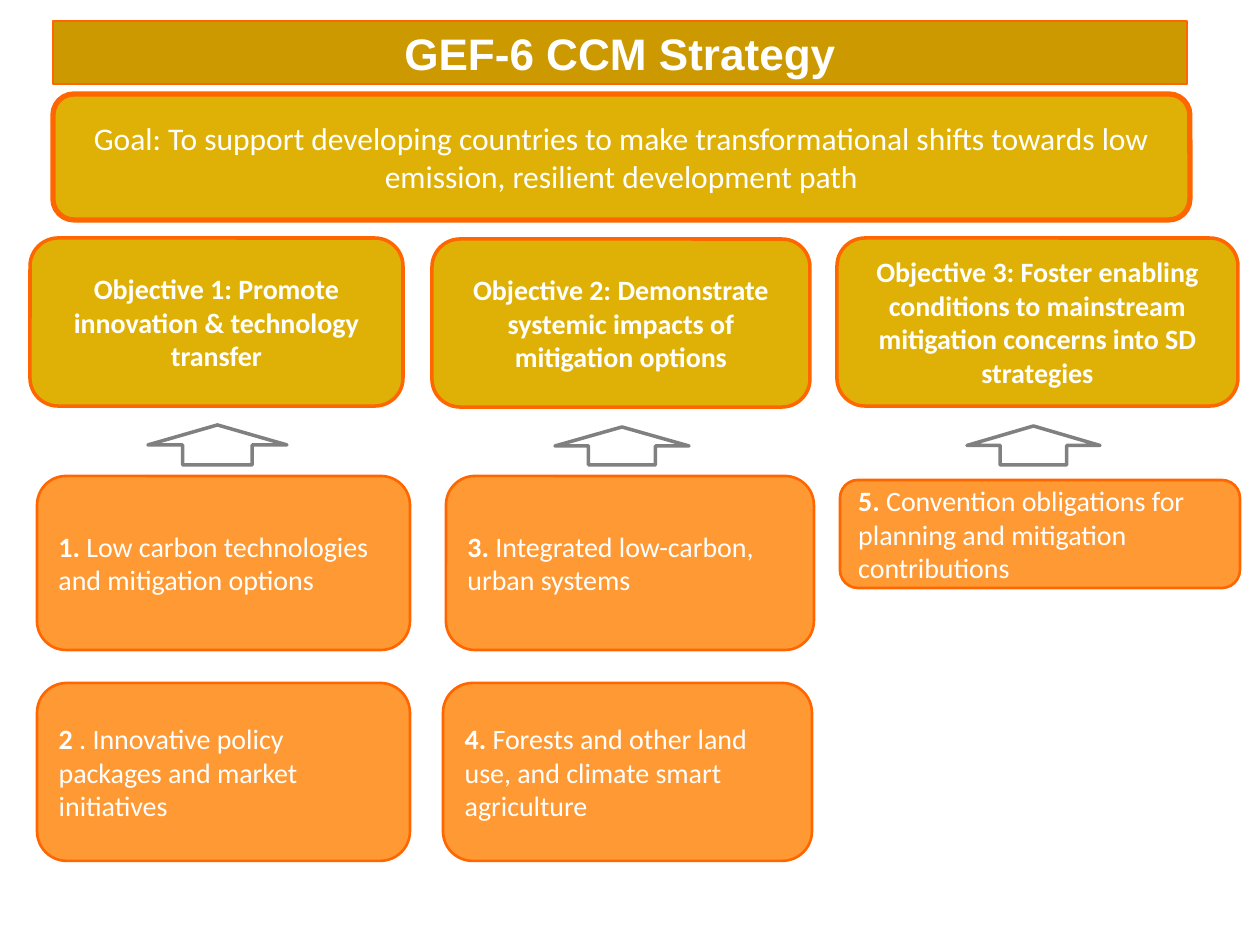
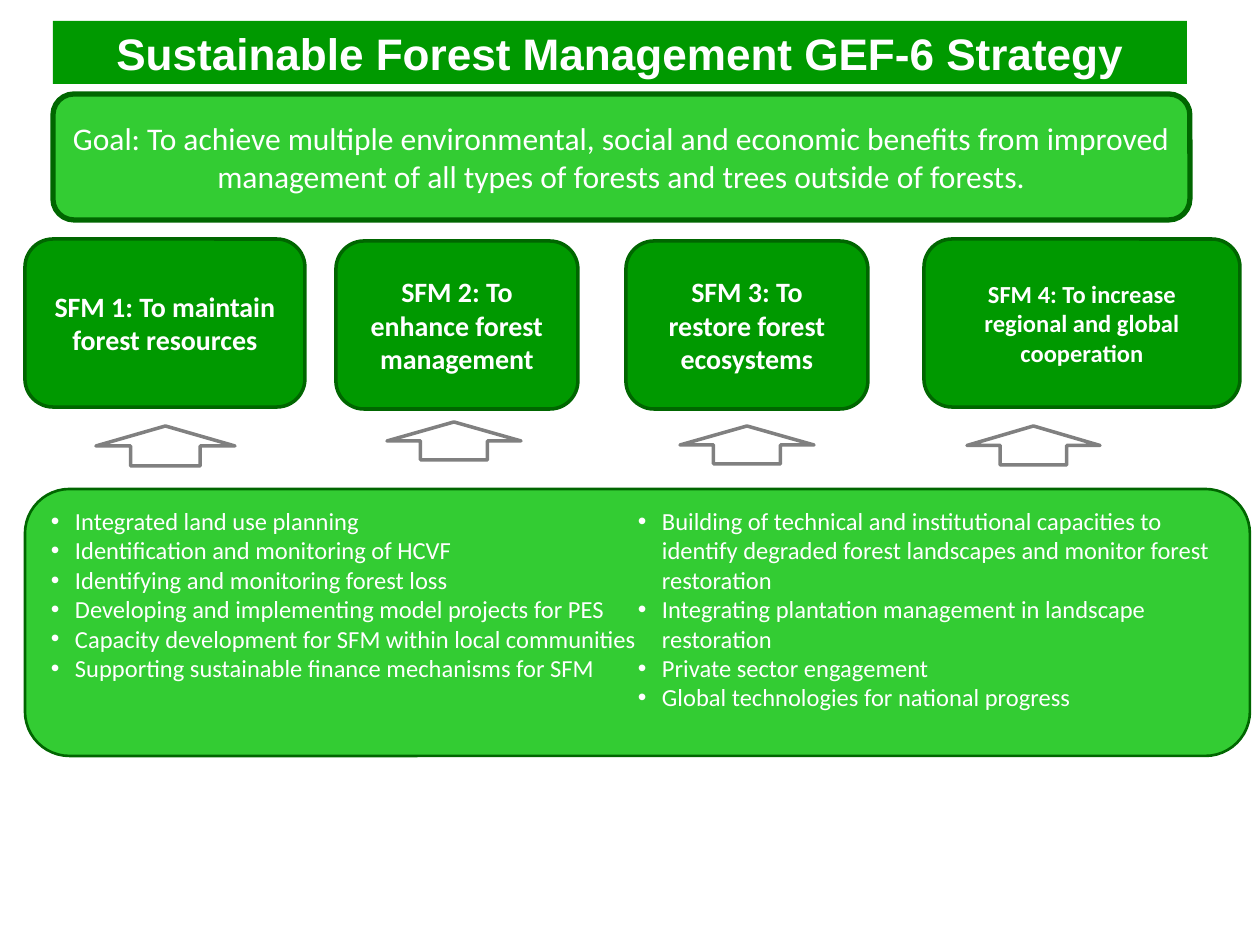
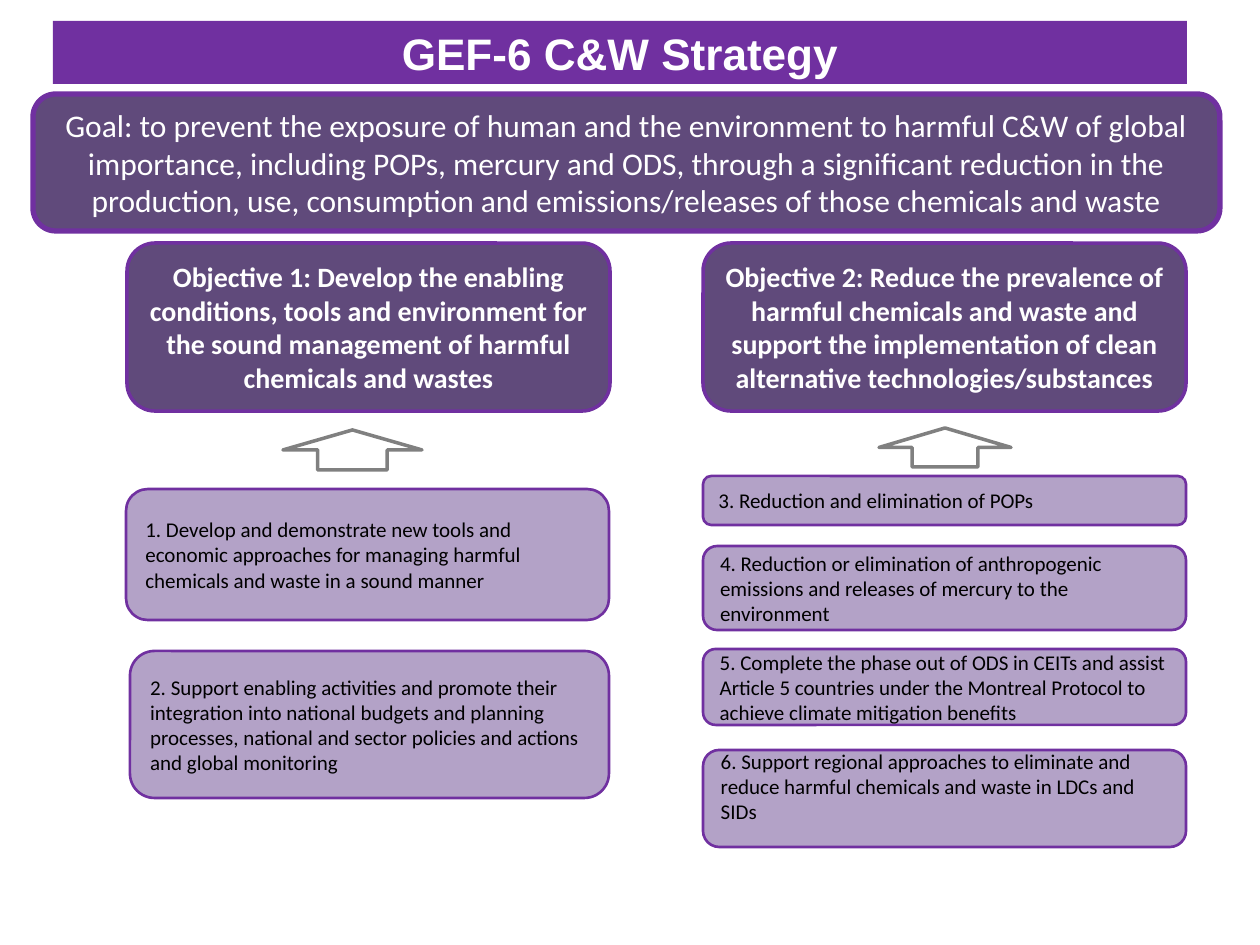
from pptx import Presentation
from pptx.util import Emu, Pt
from pptx.dml.color import RGBColor
from pptx.enum.shapes import MSO_SHAPE
from pptx.enum.text import MSO_ANCHOR, PP_ALIGN
from lxml import etree

RECT = MSO_SHAPE.RECTANGLE
ROUND = MSO_SHAPE.ROUNDED_RECTANGLE
ARROW = MSO_SHAPE.UP_ARROW
TOP, MIDDLE = MSO_ANCHOR.TOP, MSO_ANCHOR.MIDDLE
LEFT, CENTER = PP_ALIGN.LEFT, PP_ALIGN.CENTER
SCALE = 914400 / 126
NS = "http://schemas.openxmlformats.org/drawingml/2006/main"
WIDE, TALL = 1260, 945
INDENT = 24
PAD = (13, 6, 13, 6)

HEX = {
    "white": "FFFFFF", "black": "000000", "gray": "808080",
    "ochre": "CC9900", "gold": "DFB107", "amber": "FF9933", "flame": "FF6600",
    "green": "009900", "lime": "33CC33", "pine": "006600",
    "violet": "7030A0", "plum": "604A7B", "lilac": "B3A2C7",
}


def px(n):
    return Emu(round(n * SCALE))


def tint(name):
    return RGBColor.from_string(HEX[name])


def mark(para):
    props = para._p.get_or_add_pPr()
    props.set("marL", str(px(INDENT)))
    props.set("indent", str(-px(INDENT)))
    etree.SubElement(props, f"{{{NS}}}buFont").set("typeface", "Arial")
    etree.SubElement(props, f"{{{NS}}}buChar").set("char", "•")


def write(shape, paras, size=16, font="Calibri", color="white", bold=False,
          align=LEFT, anchor=MIDDLE, pad=PAD, bullet=False):
    frame = shape.text_frame
    frame.word_wrap = True
    frame.vertical_anchor = anchor
    (frame.margin_left, frame.margin_top,
     frame.margin_right, frame.margin_bottom) = map(px, pad)
    for i, runs in enumerate(paras):
        para = frame.add_paragraph() if i else frame.paragraphs[0]
        para.alignment = align
        if bullet:
            mark(para)
        if isinstance(runs, str):
            runs = [(runs, bold)]
        for text, heavy in runs:
            run = para.add_run()
            run.text = text
            run.font.size = Pt(size)
            run.font.name = font
            run.font.bold = heavy
            run.font.color.rgb = tint(color)


def block(slide, kind, area, fill, line=None, width=1.5):
    shape = slide.shapes.add_shape(kind, *map(px, area))
    shape.shadow.inherit = False
    shape.fill.solid()
    shape.fill.fore_color.rgb = tint(fill)
    if line:
        shape.line.color.rgb = tint(line)
        shape.line.width = Pt(width)
    else:
        shape.line.fill.background()
    return shape


def title(slide, text, fill, line=None):
    shape = block(slide, RECT, (53, 21, 1134, 63), fill, line, 0.75)
    write(shape, [text], size=25.2, font="Arial", bold=True, align=CENTER)


def goal(slide, text, fill, line, area=(53, 94, 1137, 126)):
    shape = block(slide, ROUND, area, fill, line, 3)
    write(shape, ["Goal: " + text], size=18, align=CENTER)


def aim(slide, text, x, y, w, fill, line, size=16):
    shape = block(slide, ROUND, (x, y, w, 168), fill, line, 2)
    write(shape, [text], size=size, bold=True, align=CENTER)


def item(slide, area, runs, fill, line, **form):
    write(block(slide, ROUND, area, fill, line), [runs], **form)


def arrows(slide, areas):
    for area in areas:
        block(slide, ARROW, area, "white", "gray", 2)


def climate(slide):
    title(slide, "GEF-6 CCM Strategy", "ochre", "flame")
    goal(slide, "To support developing countries to make transformational shifts "
         "towards low emission, resilient development path", "gold", "flame")
    for x, y, w, text in [
        (30, 238, 373, "Objective 1: Promote innovation & technology transfer"),
        (432, 239, 378, "Objective 2: Demonstrate systemic impacts of mitigation options"),
        (837, 238, 401, "Objective 3: Foster enabling conditions to mainstream "
                        "mitigation concerns into SD strategies"),
    ]:
        aim(slide, text, x, y, w, "gold", "flame")
    for area, num, text in [
        ((37, 476, 373, 174), "1. ", "Low carbon technologies and mitigation options"),
        ((37, 683, 373, 178), "2 ", ". Innovative policy packages and market initiatives"),
        ((446, 476, 368, 174), "3. ", "Integrated low-carbon, urban systems"),
        ((443, 683, 369, 178), "4. ", "Forests and other land use, and climate smart agriculture"),
        ((840, 480, 400, 108), "5. ", "Convention obligations for planning and "
                                      "mitigation contributions"),
    ]:
        item(slide, area, [(num, True), (text, False)], "amber", "flame")
    arrows(slide, [(148, 425, 139, 40), (555, 427, 134, 38), (967, 426, 133, 39)])


def forest(slide):
    title(slide, "Sustainable Forest Management GEF-6 Strategy", "green")
    goal(slide, "To achieve multiple environmental, social and economic benefits "
         "from improved management of all types of forests and trees outside of "
         "forests.", "lime", "pine")
    arrows(slide, [(96, 426, 139, 40), (387, 422, 134, 38),
                   (680, 426, 134, 38), (967, 426, 133, 39)])
    for x, y, w, size, text in [
        (25, 239, 280, 16, "SFM 1: To maintain forest resources"),
        (336, 241, 242, 16, "SFM 2: To enhance forest management"),
        (626, 241, 242, 16, "SFM 3: To restore forest ecosystems"),
        (924, 239, 316, 14, "SFM 4: To increase regional and global cooperation"),
    ]:
        aim(slide, text, x, y, w, "green", "pine", size)
    panel = block(slide, ROUND, (25, 489, 1225, 267), "lime", "pine")
    write(panel, [
        "Integrated land use planning",
        "Identification and monitoring of HCVF",
        "Identifying and monitoring forest loss",
        "Developing and implementing model projects for PES",
        "Capacity development for SFM within local communities",
        "Supporting sustainable finance mechanisms for SFM",
    ], size=14, anchor=TOP, pad=(13, 4, 594, 6), bullet=True)
    side = slide.shapes.add_textbox(*map(px, (638, 506, 587, 240)))
    write(side, [
        "Building of technical and institutional capacities to identify degraded "
        "forest landscapes and monitor forest restoration",
        "Integrating plantation management in landscape restoration",
        "Private sector engagement",
        "Global technologies for national progress",
    ], size=14, anchor=TOP, pad=(0, 0, 0, 0), bullet=True)


def waste(slide):
    title(slide, "GEF-6 C&W Strategy", "violet")
    goal(slide, "to prevent the exposure of human and the environment to harmful "
         "C&W of global importance, including POPs, mercury and ODS, through a "
         "significant reduction in the production, use, consumption and "
         "emissions/releases of those chemicals and waste",
         "plum", "violet", (33, 94, 1187, 137))
    arrows(slide, [(283, 430, 139, 40), (879, 428, 132, 39)])
    for x, text in [
        (127, "Objective 1: Develop the enabling conditions, tools and environment "
              "for the sound management of harmful chemicals and wastes"),
        (703, "Objective 2: Reduce the prevalence of harmful chemicals and waste "
              "and support the implementation of clean alternative "
              "technologies/substances"),
    ]:
        aim(slide, text, x, 243, 483, "plum", "violet")
    for area, low, text in [
        ((126, 489, 483, 131), 6,
         "1. Develop and demonstrate new tools and economic approaches for "
         "managing harmful chemicals and waste in a sound manner"),
        ((130, 651, 479, 147), 6,
         "2. Support enabling activities and promote their integration into "
         "national budgets and planning processes, national and sector policies "
         "and actions and global monitoring"),
        ((703, 476, 483, 49), 6, "3. Reduction and elimination of POPs"),
        ((703, 546, 483, 84), 6,
         "4. Reduction or elimination of anthropogenic emissions and releases of "
         "mercury to the environment"),
        ((703, 649, 483, 76), 6,
         "5. Complete the phase out of ODS in CEITs and assist Article 5 countries "
         "under the Montreal Protocol to achieve climate mitigation benefits"),
        ((703, 750, 483, 97), 31,
         "6. Support regional approaches to eliminate and reduce harmful chemicals "
         "and waste in LDCs and SIDs"),
    ]:
        item(slide, area, text, "lilac", "violet", size=12, color="black",
             pad=(13, 6, 13, low))


def main():
    deck = Presentation()
    deck.slide_width, deck.slide_height = px(WIDE), px(TALL)
    for build in (climate, forest, waste):
        build(deck.slides.add_slide(deck.slide_layouts[6]))
    deck.save("out.pptx")


if __name__ == "__main__":
    main()
